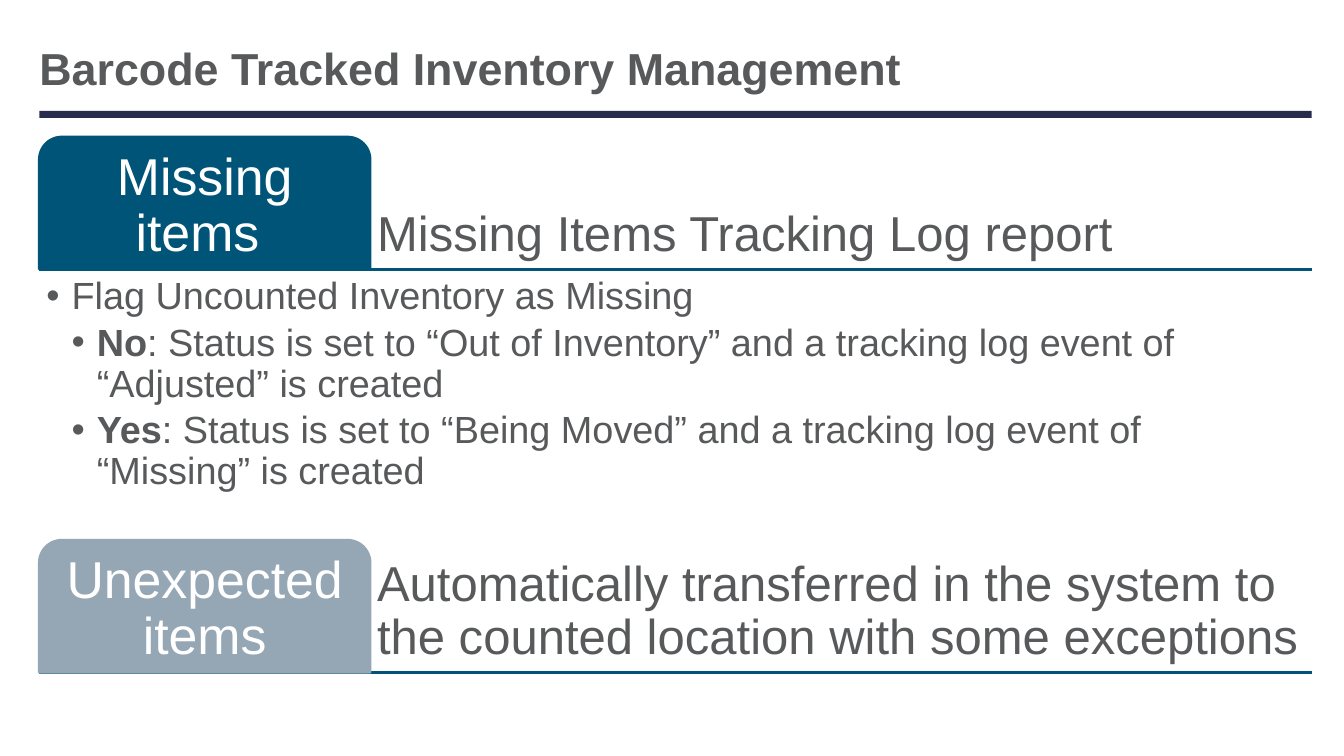
from lxml import etree
from pptx import Presentation
from pptx import util as u
from pptx.dml.color import RGBColor
from pptx.enum import shapes, text
from pptx.oxml import ns

COLORS = {"navy": "282D4E", "teal": "005477", "slate": "95A6B5", "gray": "58595B", "white": "FFFFFF"}
LEFT, RIGHT = 0.39, 13.01
TAB_WIDTH, TAB_HEIGHT = 3.28, 1.31
INDENT = 0.25


def write_text(shape, paragraphs, size, color="gray", bold=False, anchor=text.MSO_ANCHOR.MIDDLE,
               align=text.PP_ALIGN.LEFT, side_inset=0.07, end_inset=0.07,
               line_spacing=0.9, space_after=0, bulleted=False):
    frame = shape.text_frame
    frame.word_wrap = True
    frame.vertical_anchor = anchor
    frame.margin_left = frame.margin_right = u.Inches(side_inset)
    frame.margin_top = frame.margin_bottom = u.Inches(end_inset)
    for index, (level, lead, body) in enumerate(paragraphs):
        paragraph = frame.add_paragraph() if index else frame.paragraphs[0]
        paragraph.alignment = align
        paragraph.line_spacing = line_spacing
        paragraph.space_after = u.Pt(space_after)
        if bulleted:
            paragraph.level = level
            properties = paragraph._p.get_or_add_pPr()
            properties.set("marL", str(u.Inches(INDENT * level)))
            properties.set("indent", str(-u.Inches(INDENT)))
            etree.SubElement(properties, ns.qn("a:buFont")).set("typeface", "Arial")
            etree.SubElement(properties, ns.qn("a:buChar")).set("char", "•")
        for words, is_bold in ((lead, True), (body, bold)):
            if words:
                run = paragraph.add_run()
                run.text = words
                run.font.name = "Arial"
                run.font.size = u.Pt(size)
                run.font.bold = is_bold
                run.font.color.rgb = RGBColor.from_string(COLORS[color])


presentation = Presentation()
presentation.slide_width = u.Inches(13.33)
presentation.slide_height = u.Inches(7.5)
slide = presentation.slides.add_slide(presentation.slide_layouts[6])

title_rule = slide.shapes.add_shape(
    shapes.MSO_SHAPE.RECTANGLE, u.Inches(LEFT), u.Inches(1.1), u.Inches(RIGHT - LEFT), u.Inches(0.07))
title_rule.shadow.inherit = False
title_rule.fill.solid()
title_rule.fill.fore_color.rgb = RGBColor.from_string(COLORS["navy"])
title_rule.line.fill.background()

title = slide.shapes.add_textbox(u.Inches(LEFT), u.Inches(0.41), u.Inches(RIGHT - LEFT), u.Inches(0.61))
write_text(title, [(0, "", "Barcode Tracked Inventory Management")], size=32, bold=True,
           side_inset=0, end_inset=0.05, line_spacing=0.85)

sections = [
    (1.36, "teal", "Missing items ", "Missing Items Tracking Log report"),
    (5.36, "slate", "Unexpected items",
     "Automatically transferred in the system to the counted location with some exceptions"),
]
for top, color, label, summary in sections:
    bottom = u.Inches(top + TAB_HEIGHT)
    baseline = slide.shapes.add_connector(
        shapes.MSO_CONNECTOR.STRAIGHT, u.Inches(LEFT), bottom, u.Inches(RIGHT), bottom)
    baseline.line.color.rgb = RGBColor.from_string(COLORS["teal"])
    baseline.line.width = u.Pt(2)
    etree.SubElement(baseline._element.spPr, ns.qn("a:effectLst"))

    summary_box = slide.shapes.add_textbox(
        u.Inches(LEFT + TAB_WIDTH), u.Inches(top),
        u.Inches(RIGHT - LEFT - TAB_WIDTH), u.Inches(TAB_HEIGHT))
    write_text(summary_box, [(0, "", summary)], size=35, anchor=text.MSO_ANCHOR.BOTTOM)

    tab = slide.shapes.add_shape(
        shapes.MSO_SHAPE.ROUND_2_SAME_RECTANGLE, u.Inches(LEFT), u.Inches(top),
        u.Inches(TAB_WIDTH), u.Inches(TAB_HEIGHT))
    tab.adjustments[0] = 0.17
    tab.shadow.inherit = False
    tab.fill.solid()
    tab.fill.fore_color.rgb = RGBColor.from_string(COLORS[color])
    tab.line.color.rgb = RGBColor.from_string(COLORS[color])
    tab.line.width = u.Pt(2)
    write_text(tab, [(0, "", label)], size=37, color="white", align=text.PP_ALIGN.CENTER,
               side_inset=0.08, end_inset=0.08)

details = slide.shapes.add_textbox(u.Inches(LEFT), u.Inches(2.68), u.Inches(RIGHT - LEFT), u.Inches(2.62))
write_text(details, [
    (1, "", "Flag Uncounted Inventory as Missing"),
    (2, "No", ": Status is set to “Out of Inventory” and a tracking log event of “Adjusted” is created"),
    (2, "Yes", ": Status is set to “Being Moved” and a tracking log event of “Missing” is created"),
], size=27, anchor=text.MSO_ANCHOR.TOP, space_after=4, bulleted=True)

presentation.save("out.pptx")
